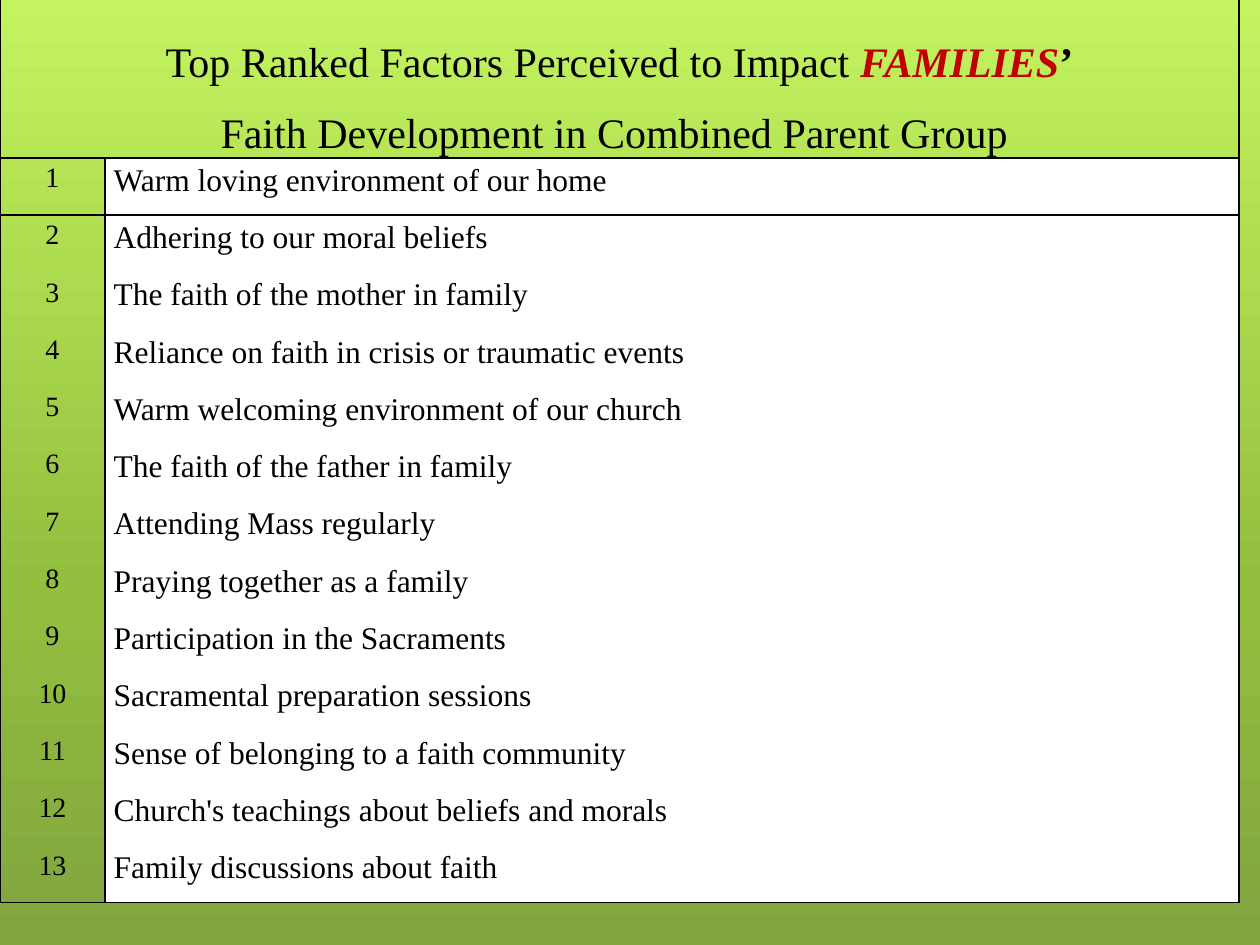
from copy import deepcopy
from dataclasses import dataclass, field

from lxml.etree import SubElement
from pptx import Presentation
from pptx.dml.color import RGBColor
from pptx.enum.text import MSO_ANCHOR, PP_ALIGN
from pptx.oxml.ns import qn
from pptx.util import Pt

BLACK = RGBColor(0x00, 0x00, 0x00)
WHITE = RGBColor(0xFF, 0xFF, 0xFF)
RED = RGBColor(0xC0, 0x00, 0x00)
LIME = RGBColor(0xC3, 0xF3, 0x5F)
LEAF = RGBColor(0x93, 0xBF, 0x3F)
MOSS = RGBColor(0x81, 0xA5, 0x3E)

STOPS = [(0, LIME), (0.62, LEAF), (1, MOSS)]
PLAIN = "{2D5ABB26-0587-4C30-8999-92F81FD0307C}"  # no style, no grid
HEAD_H, ROW_H = Pt(114.2), Pt(32.76)
WIDTHS = [Pt(60), Pt(648)]

SPACING = {"line_spacing": 1.15, "space_after": Pt(10)}
INSETS = {"margin_left": Pt(5), "margin_right": Pt(5),
          "margin_top": Pt(0), "margin_bottom": Pt(0)}
FLAGS = {"first_row": False, "horz_banding": False}

FACTORS = [
    "Warm loving environment of our home",
    "Adhering to our moral beliefs",
    "The faith of the mother in family",
    "Reliance on faith in crisis or traumatic events",
    "Warm welcoming environment of our church",
    "The faith of the father in family",
    "Attending Mass regularly",
    "Praying together as a family",
    "Participation in the Sacraments",
    "Sacramental preparation sessions",
    "Sense of belonging to a faith community",
    "Church's teachings about beliefs and morals",
    "Family discussions about faith",
]


@dataclass
class Span:
    text: str
    size: int
    look: dict = field(default_factory=dict)
    color: RGBColor = BLACK


TITLE = [
    [Span("Top Ranked Factors Perceived to Impact ", 24),
     Span("FAMILIES", 24, {"bold": True, "italic": True}, RED),
     Span("’", 24, {"bold": True})],
    [Span("Faith Development in Combined Parent Group ", 24)],
]


def apply(item, looks: dict) -> None:
    for name, value in looks.items():
        setattr(item, name, value)


def paint(slide) -> None:
    """Fill the background with a three-stop vertical gradient."""
    fill = slide.background.fill
    fill.gradient()
    fill.gradient_angle = 270
    stops = slide.element.find(".//" + qn("a:gsLst"))
    stops.append(deepcopy(stops[-1]))
    for stop, (place, color) in zip(fill.gradient_stops, STOPS):
        stop.position = place
        stop.color.rgb = color


def border(cell, sides: str) -> None:
    """Draw black one-point lines on the given sides, in L R T B order."""
    props = cell._tc.get_or_add_tcPr()
    for side in sides:
        line = SubElement(props, qn("a:ln" + side), w=str(Pt(1)))
        fill = SubElement(line, qn("a:solidFill"))
        SubElement(fill, qn("a:srgbClr"), val=str(BLACK))


def write(cell, lines: list[list[Span]], align: PP_ALIGN) -> None:
    apply(cell, INSETS)
    frame = cell.text_frame
    for i, spans in enumerate(lines):
        para = frame.add_paragraph() if i else frame.paragraphs[0]
        apply(para, SPACING | {"alignment": align})
        for span in spans:
            run = para.add_run()
            run.text = span.text
            apply(run.font, {"name": "Times New Roman",
                             "size": Pt(span.size)} | span.look)
            run.font.color.rgb = span.color


def main() -> None:
    deck = Presentation()
    apply(deck, {"slide_width": Pt(720), "slide_height": Pt(540)})
    slide = deck.slides.add_slide(deck.slide_layouts[6])
    paint(slide)

    # Table grid
    count = len(FACTORS)
    frame = slide.shapes.add_table(count + 1, 2, Pt(0), Pt(-24), sum(WIDTHS),
                                   HEAD_H + count * ROW_H)
    table = frame.table
    apply(table, FLAGS)
    table._tbl.tblPr.find(qn("a:tableStyleId")).text = PLAIN
    for col, width in zip(table.columns, WIDTHS):
        col.width = width
    for i, row in enumerate(table.rows):
        row.height = ROW_H if i else HEAD_H

    # Title row
    head = table.cell(0, 0)
    head.merge(table.cell(0, 1))
    for cell in table.rows[0].cells:
        border(cell, "LRTB")
        cell.fill.background()
    write(head, TITLE, PP_ALIGN.CENTER)
    head.vertical_anchor = MSO_ANCHOR.BOTTOM

    # Ranked factors
    for rank, factor in enumerate(FACTORS, 1):
        num, text = table.rows[rank].cells
        sides = "LR" + "T" * (rank == 1) + "B" * (rank == count)
        for cell in (num, text):
            border(cell, sides)
        num.fill.background()
        text.fill.solid()
        text.fill.fore_color.rgb = WHITE
        write(num, [[Span(str(rank), 16)]], PP_ALIGN.CENTER)
        write(text, [[Span(factor, 18)]], PP_ALIGN.LEFT)

    deck.save("out.pptx")


if __name__ == "__main__":
    main()
